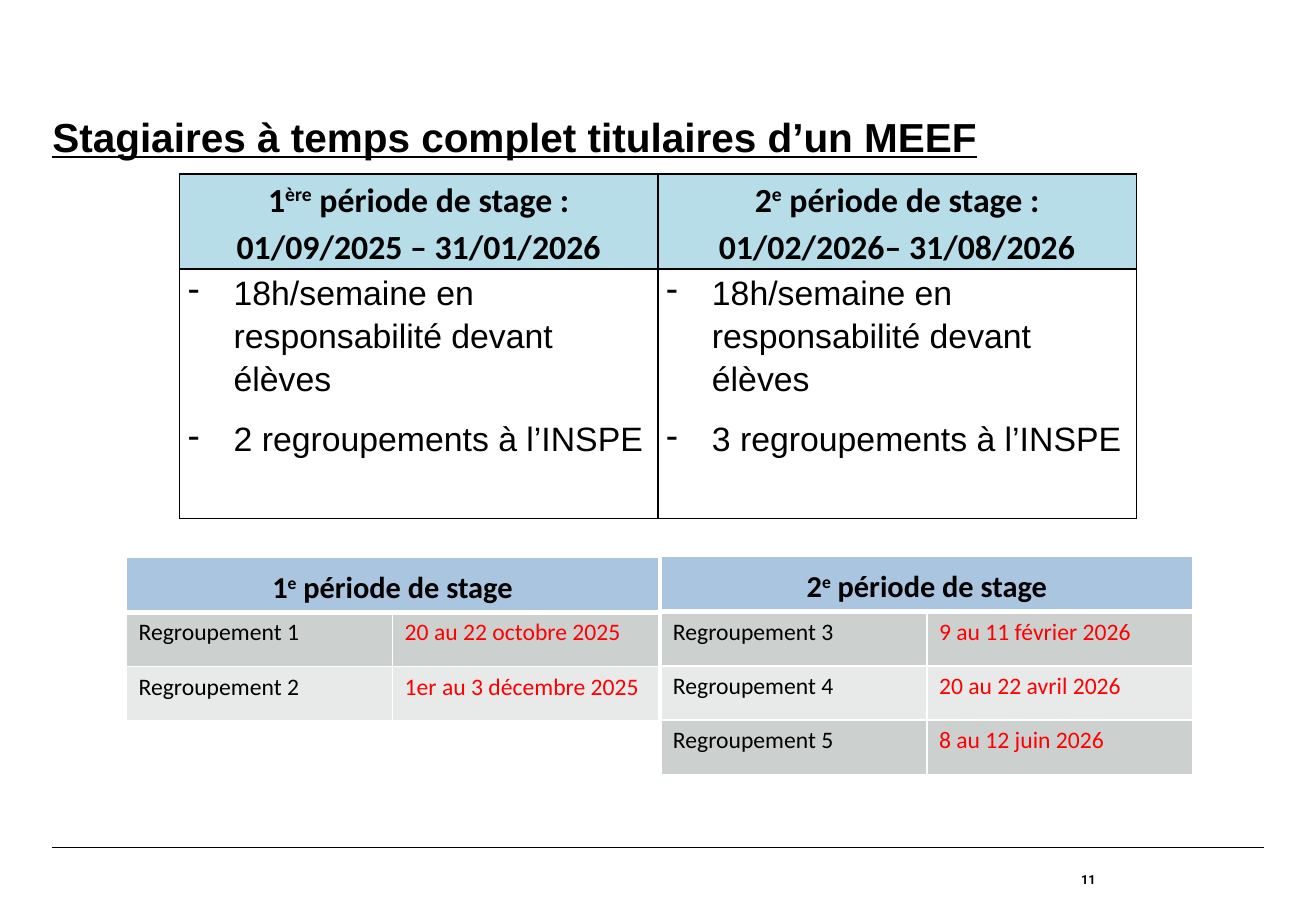
import dataclasses

import pptx
import pptx.dml.color
import pptx.enum.shapes
import pptx.enum.text
import pptx.oxml
import pptx.oxml.ns
import pptx.util

Pt = pptx.util.Pt
ALIGN = pptx.enum.text.PP_ALIGN
ANCHOR = pptx.enum.text.MSO_ANCHOR
NAMESPACE = pptx.oxml.ns.nsdecls("a")


@dataclasses.dataclass(frozen=True)
class Theme:
    ink: str = "000000"
    date: str = "FF0000"
    grid: str = "FFFFFF"
    period_fill: str = "B6DDE8"
    header_fill: str = "A9C5DF"
    bands: tuple = ("CCD1CF", "E7EAE9")
    heading_font: str = "Arial"
    table_font: str = "Calibri"
    number_font: str = "Roboto"
    title_size: float = 24
    period_size: float = 20
    header_size: float = 18
    row_size: float = 14
    number_size: float = 7.5
    line_spacing: float = 1.15


def rgb(colour):
    return pptx.dml.color.RGBColor.from_string(colour)


class StagePage:
    """Holds the theme and the slide being filled."""

    def __init__(self, deck, theme):
        self.theme = theme
        self.page = deck.slides.add_slide(deck.slide_layouts[5])

    def style(self, para, font, size, colour=None, bold=False, underline=None):
        for span in para.runs:
            span.font.name = font
            span.font.size = Pt(size)
            span.font.bold = bold
            span.font.underline = underline
            span.font.color.rgb = rgb(colour or self.theme.ink)

    def frame(self, box, place, anchor):
        box.left, box.top, box.width, box.height = map(Pt, place)
        text = box.text_frame
        text.word_wrap = True
        text.auto_size = pptx.enum.text.MSO_AUTO_SIZE.NONE
        text.vertical_anchor = anchor
        text.margin_left = text.margin_right = text.margin_top = text.margin_bottom = 0
        return text

    def title(self, words, place):
        text = self.frame(self.page.shapes.title, place, ANCHOR.TOP)
        text.text = words
        para = text.paragraphs[0]
        para.alignment = ALIGN.LEFT
        self.style(para, self.theme.heading_font, self.theme.title_size,
                   bold=True, underline=True)

    def page_number(self, number, place):
        box = self.page.shapes.add_textbox(0, 0, 0, 0)
        text = self.frame(box, place, ANCHOR.MIDDLE)
        text.text = number
        para = text.paragraphs[0]
        para.alignment = ALIGN.RIGHT
        self.style(para, self.theme.number_font, self.theme.number_size, bold=True)

    def rule(self, left, right, top):
        line = self.page.shapes.add_connector(
            pptx.enum.shapes.MSO_CONNECTOR.STRAIGHT, Pt(left), Pt(top), Pt(right), Pt(top))
        line.line.color.rgb = rgb(self.theme.ink)
        line.line.width = Pt(0.8)
        line._element.spPr.append(pptx.oxml.parse_xml(f"<a:effectLst {NAMESPACE}/>"))

    def table(self, left, top, column_width, row_heights):
        frame = self.page.shapes.add_table(
            len(row_heights), 2, Pt(left), Pt(top), Pt(2 * column_width), Pt(sum(row_heights)))
        table = frame.table
        table.horz_banding = False
        for column in table.columns:
            column.width = Pt(column_width)
        for row, height in zip(table.rows, row_heights):
            row.height = Pt(height)
        return table

    def finish_cell(self, cell, fill, border, top=1, bottom=1):
        """Border the four sides first, then fill: the schema wants that order."""
        properties = cell._tc.get_or_add_tcPr()
        for side, width in zip("LRTB", (1, 1, top, bottom)):
            properties.append(pptx.oxml.parse_xml(
                f'<a:ln{side} {NAMESPACE} w="{Pt(width)}"><a:solidFill>'
                f'<a:srgbClr val="{border}"/></a:solidFill></a:ln{side}>'))
        if fill:
            cell.fill.solid()
            cell.fill.fore_color.rgb = rgb(fill)
        else:
            cell.fill.background()

    def heading(self, para, words, size):
        """Write a centred heading; text between carets is superscript."""
        for index, part in enumerate(words.split("^")):
            span = para.add_run()
            span.text = part
            if index % 2:
                span._r.get_or_add_rPr().set("baseline", "30000")
        para.alignment = ALIGN.CENTER
        para.line_spacing = self.theme.line_spacing
        self.style(para, self.theme.table_font, size, bold=True)

    def dash_item(self, para, words):
        para.text = words
        properties = para._p.get_or_add_pPr()
        properties.set("marL", str(Pt(27)))
        properties.set("indent", str(-Pt(27)))
        properties.append(pptx.oxml.parse_xml(f'<a:buChar {NAMESPACE} char="-"/>'))
        para.line_spacing = self.theme.line_spacing
        para.space_after = Pt(10)
        self.style(para, self.theme.heading_font, self.theme.period_size)

    def period_table(self, left, top, periods):
        table = self.table(left, top, 283.5, (56, 148))
        for column, (headings, duties) in enumerate(periods):
            for row, lines in enumerate((headings, duties)):
                cell = table.cell(row, column)
                cell.margin_left = cell.margin_right = Pt(5)
                cell.margin_top = cell.margin_bottom = 0
                text = cell.text_frame
                for index, words in enumerate(lines):
                    para = text.add_paragraph() if index else text.paragraphs[0]
                    if row:
                        self.dash_item(para, words)
                    else:
                        self.heading(para, words, self.theme.period_size)
                self.finish_cell(cell, None if row else self.theme.period_fill, self.theme.ink)

    def meeting_table(self, left, top, heading, meetings):
        theme = self.theme
        table = self.table(left, top, 157.7, [32.2] * (len(meetings) + 1))
        table.cell(0, 0).merge(table.cell(0, 1))
        self.heading(table.cell(0, 0).text_frame.paragraphs[0], heading, theme.header_size)
        for column in range(2):
            self.finish_cell(table.cell(0, column), theme.header_fill, theme.grid, bottom=3)
        for row, meeting in enumerate(meetings, 1):
            for column, (words, colour) in enumerate(zip(meeting, (theme.ink, theme.date))):
                cell = table.cell(row, column)
                cell.text_frame.text = words
                self.style(cell.text_frame.paragraphs[0], theme.table_font,
                           theme.row_size, colour)
                self.finish_cell(cell, theme.bands[(row - 1) % 2], theme.grid,
                                 top=3 if row == 1 else 1)


def main():
    deck = pptx.Presentation()
    deck.slide_width, deck.slide_height = Pt(780), Pt(540)
    stage = StagePage(deck, Theme())
    stage.rule(31, 749.5, 502.5)
    stage.page_number("11", (534, 502.5, 115.5, 37.5))
    stage.title("Stagiaires à temps complet titulaires d’un MEEF", (31, 66.5, 718.5, 34))

    hours = "18h/semaine en responsabilité devant élèves"
    stage.period_table(106.5, 103, [
        (["1^ère^ période de stage :", "01/09/2025 – 31/01/2026"],
         [hours, "2 regroupements à l’INSPE"]),
        (["2^e^ période de stage : 01/02/2026– 31/08/2026"],
         [hours, "3 regroupements à l’INSPE"]),
    ])
    stage.meeting_table(75, 330.5, "1^e^ période de stage", [
        ("Regroupement 1", "20 au 22 octobre 2025"),
        ("Regroupement 2", "1er au 3 décembre 2025"),
    ])
    stage.meeting_table(391.7, 330, "2^e^ période de stage", [
        ("Regroupement 3", "9 au 11 février 2026"),
        ("Regroupement 4", "20 au 22 avril 2026"),
        ("Regroupement 5", "8 au 12 juin 2026"),
    ])
    deck.save("out.pptx")


if __name__ == "__main__":
    main()
